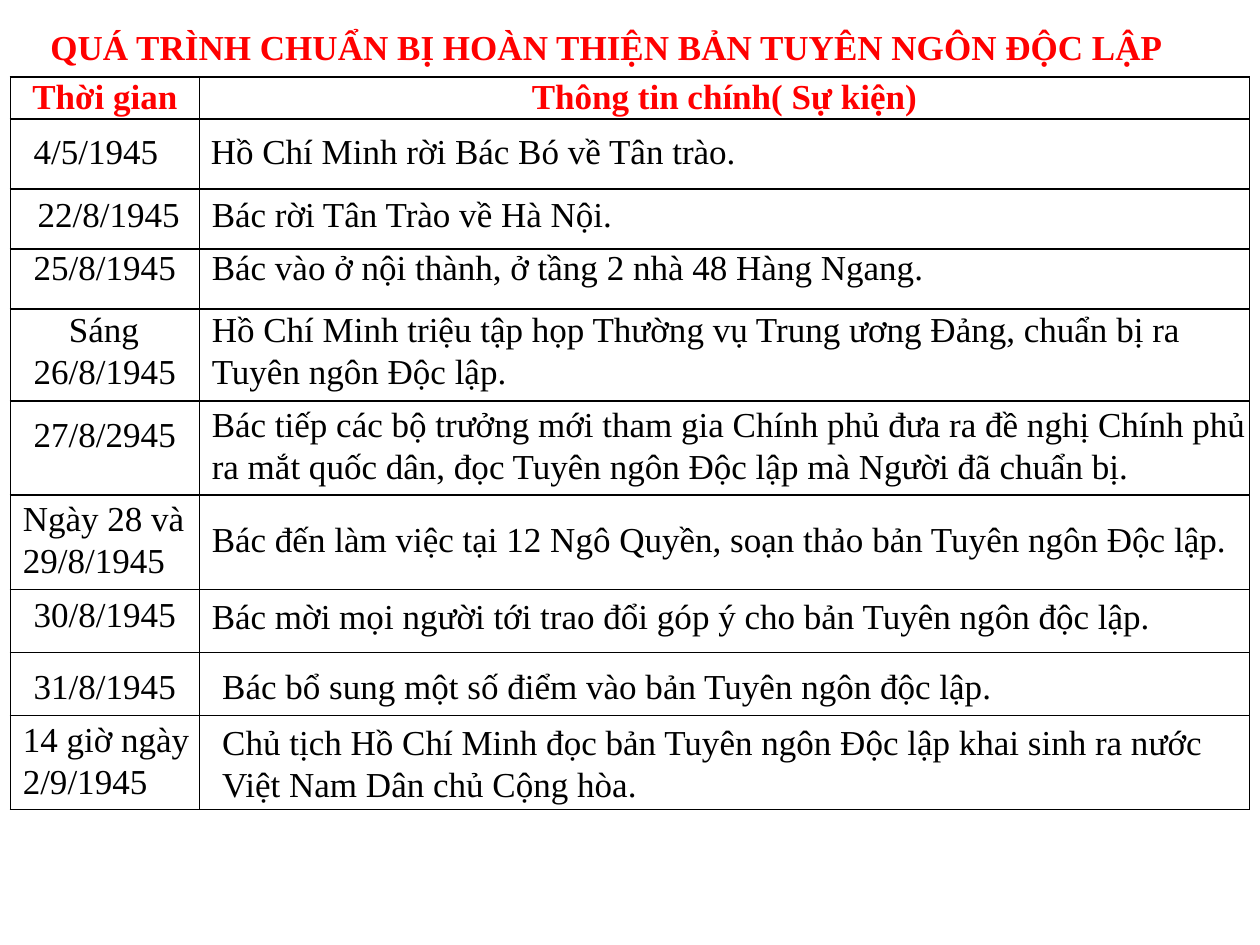
"""Build a slide with a timeline table of the Declaration of Independence."""
from lxml.etree import SubElement
from pptx import Presentation
from pptx.dml.color import RGBColor
from pptx.enum.text import MSO_ANCHOR, MSO_AUTO_SIZE, PP_ALIGN
from pptx.oxml.ns import qn
from pptx.util import Cm, Pt

RED, BLACK = "FF0000", "000000"


def style(para, color, bold=False):
    """Set the font of a paragraph."""
    font = para.font
    font.name, font.size, font.bold = "Times New Roman", Pt(20), bold
    font.color.rgb = RGBColor.from_string(color)


def border(cell):
    """Draw a thin black line on each side of a cell and clear its fill."""
    props = cell._tc.get_or_add_tcPr()
    for side in ("lnL", "lnR", "lnT", "lnB"):
        line = SubElement(props, qn(f"a:{side}"), w=str(Pt(1)))
        fill = SubElement(line, qn("a:solidFill"))
        SubElement(fill, qn("a:srgbClr"), val=BLACK)
    cell.fill.background()


deck = Presentation()
deck.slide_width, deck.slide_height = Cm(25.4), Cm(19.05)
slide = deck.slides.add_slide(deck.slide_layouts[5])

title = slide.shapes.title
title.left, title.top, title.width, title.height = Cm(0.76), Cm(0.38), Cm(24.33), Cm(1.11)
frame = title.text_frame
frame.text = "QUÁ TRÌNH CHUẨN BỊ HOÀN THIỆN BẢN TUYÊN NGÔN ĐỘC LẬP"
frame.auto_size, frame.vertical_anchor = MSO_AUTO_SIZE.NONE, MSO_ANCHOR.TOP
frame.paragraphs[0].alignment = PP_ALIGN.LEFT
style(frame.paragraphs[0], RED, True)

rows = [0.85, 1.41, 1.21, 1.21, 1.85, 1.9, 1.9, 1.27, 1.27, 1.9]
cols = [3.81, 21.17]
heads = ["Thời gian", "Thông tin chính( Sự kiện)"]
table = slide.shapes.add_table(
    len(rows), len(cols), Cm(0.21), Cm(1.55), Cm(sum(cols)), Cm(sum(rows))).table
table.first_row = table.horz_banding = False
for row, tall in zip(table.rows, rows):
    row.height = Cm(tall)
for col, wide in zip(table.columns, cols):
    col.width = Cm(wide)
for cell in table.iter_cells():
    border(cell)
for cell, head in zip(table.rows[0].cells, heads):
    cell.text = head
    cell.vertical_anchor = MSO_ANCHOR.MIDDLE
    cell.margin_left = cell.margin_right = Cm(0.15)
    cell.margin_top = cell.margin_bottom = 0
    para = cell.text_frame.paragraphs[0]
    para.alignment = PP_ALIGN.CENTER
    style(para, RED, True)

one, two = 1.11, 1.96
notes = [
    (0.43, 2.49, 3.81, one, "4/5/1945"),
    (4, 2.49, 13.54, one, "Hồ Chí Minh rời Bác Bó về Tân trào."),
    (0.51, 3.76, 3.38, one, "22/8/1945"),
    (4.02, 3.76, 15.88, one, "Bác rời Tân Trào về Hà Nội."),
    (0.43, 4.83, 3.81, one, "25/8/1945"),
    (4.02, 4.83, 18.62, one, "Bác vào ở nội thành, ở tầng 2 nhà 48 Hàng Ngang."),
    (0.43, 6.07, 3.81, two, "Sáng 26/8/1945"),
    (4.02, 6.07, 20.96, two, "Hồ Chí Minh triệu tập họp Thường vụ Trung ương Đảng, "
     "chuẩn bị ra Tuyên ngôn Độc lập."),
    (0.43, 8.2, 3.81, one, "27/8/2945"),
    (4.02, 7.98, 21.39, two, "Bác tiếp các bộ trưởng mới tham gia Chính phủ đưa ra đề nghị "
     "Chính phủ ra mắt quốc dân, đọc Tuyên ngôn Độc lập mà Người đã chuẩn bị."),
    (0.21, 9.88, 3.81, two, "Ngày 28 và 29/8/1945"),
    (4.02, 10.31, 21.08, one, "Bác đến làm việc tại 12 Ngô Quyền, soạn thảo bản "
     "Tuyên ngôn Độc lập."),
    (0.43, 11.81, 3.38, one, "30/8/1945"),
    (4.02, 11.86, 20.52, one, "Bác mời mọi người tới trao đổi góp ý cho bản "
     "Tuyên ngôn độc lập."),
    (0.43, 13.28, 3.38, one, "31/8/1945"),
    (4.23, 13.28, 20.32, one, "Bác bổ sung một số điểm vào bản Tuyên ngôn độc lập."),
    (0.21, 14.33, 4.02, two, "14 giờ ngày 2/9/1945"),
    (4.23, 14.4, 20.75, two, "Chủ tịch Hồ Chí Minh đọc bản Tuyên ngôn Độc lập khai sinh "
     "ra nước Việt Nam Dân chủ Cộng hòa."),
]
for left, top, wide, tall, text in notes:
    frame = slide.shapes.add_textbox(Cm(left), Cm(top), Cm(wide), Cm(tall)).text_frame
    frame.word_wrap = True
    frame.text = text
    para = frame.paragraphs[0]
    if text.startswith("Sáng"):
        para._p.get_or_add_pPr().set("indent", str(Cm(0.71)))
    style(para, BLACK)

deck.save("out.pptx")
